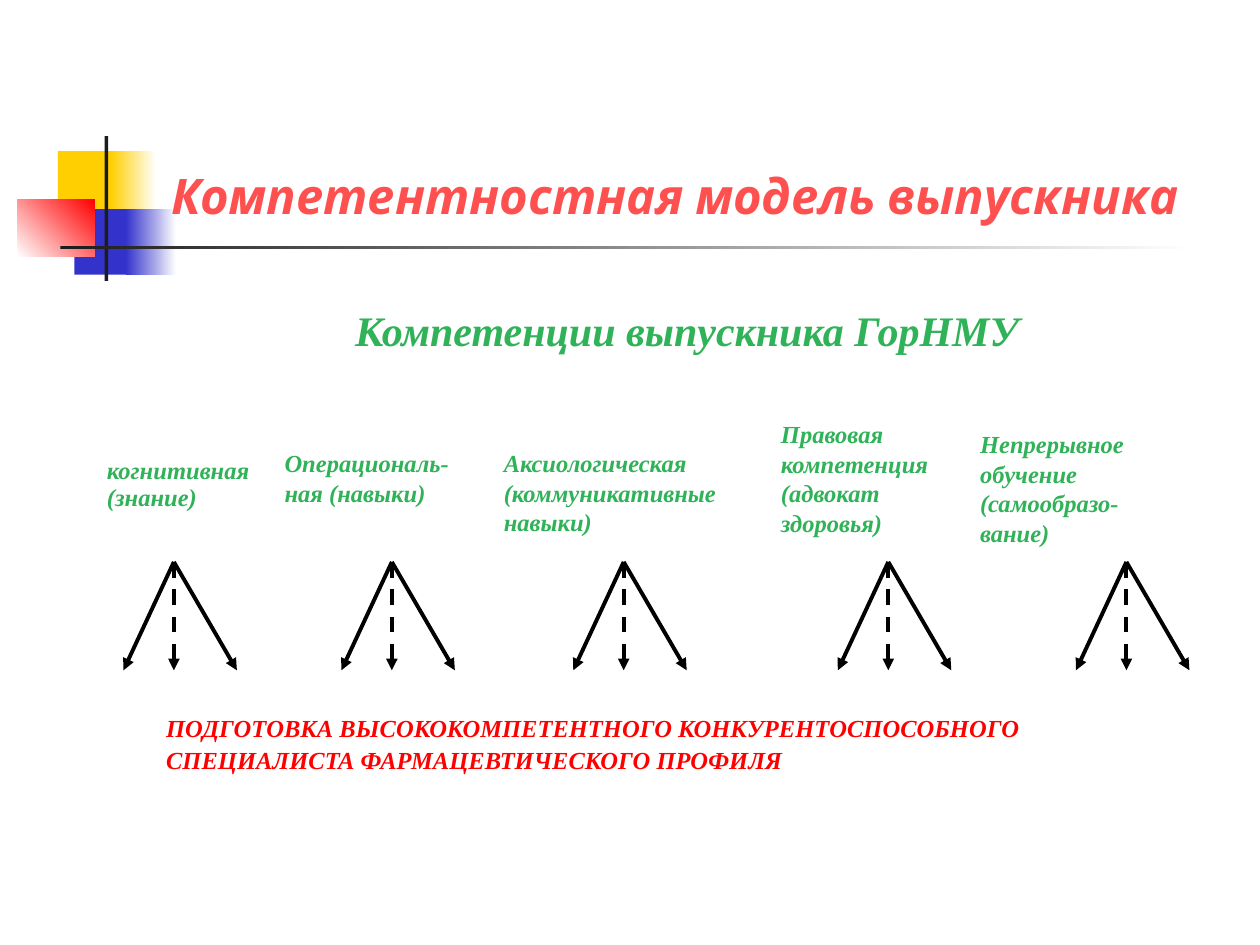
import pptx
import pptx.util
import pptx.dml.color
import pptx.enum.dml
import pptx.enum.shapes
import pptx.enum.text
import lxml.etree
from pptx.util import Inches, Pt

THEME = {
    "heading_font": "Karla", "body_font": "Times New Roman",
    "title_size": 28, "subtitle_size": 24, "body_size": 14,
    "title": "FF5050", "green": "30B258", "red": "FF0000", "black": "000000",
    "white": "FFFFFF", "yellow": "FFCF01", "blue": "3333CC", "dark": "1C1C1C",
}

TITLE = "Компетентностная модель выпускника"
SUBTITLE = "Компетенции выпускника ГорНМУ"
GOAL = ["ПОДГОТОВКА ВЫСОКОКОМПЕТЕНТНОГО КОНКУРЕНТОСПОСОБНОГО",
        "СПЕЦИАЛИСТА ФАРМАЦЕВТИЧЕСКОГО ПРОФИЛЯ"]

# Paragraphs, text box, spacing, arrow origin
COMPETENCIES = [
    (["когнитивная (знание)"], (0.75, 3.59, 1.49, 0.52),
     {"line": 0.9, "before": 3}, 1.38),
    (["Операциональ-ная (навыки)"], (2.16, 3.51, 1.65, 0.57), {}, 3.11),
    (["Аксиологическая", "(коммуникативные навыки)"],
     (3.9, 3.51, 2.36, 0.8), {}, 4.95),
    (["Правовая компетенция", "(адвокат здоровья)"],
     (6.1, 3.28, 1.57, 1.03), {}, 7.05),
    (["Непрерывное обучение", "(самообразо-вание)"],
     (7.68, 3.36, 1.65, 1.03), {}, 8.94),
]
ARROW_TOP, ARROW_BOTTOM = 4.46, 5.32
# Sideways reach of each arrow, dashed or not
ARROW_FAN = [(-0.4, False), (0.5, False), (0, True)]

# Box, first colour, last colour (None for a plain fill), gradient angle
ORNAMENT = [
    ((0.46, 1.2, 0.48, 0.52), "yellow", None, 0),
    ((0.88, 1.2, 0.36, 0.52), "yellow", "white", 0),
    ((0.59, 1.66, 0.46, 0.52), "blue", None, 0),
    ((1, 1.66, 0.4, 0.52), "blue", "white", 0),
    ((0.14, 1.58, 0.61, 0.46), "white", "red", 45),
    ((0.83, 1.08, 0.03, 1.15), "dark", None, 0),
    ((0.48, 1.95, 9, 0.03), "dark", "white", 0),
]


def colour(name):
    return pptx.dml.color.RGBColor.from_string(THEME[name])


def add_block(slide, box, first, last, angle):
    block = slide.shapes.add_shape(
        pptx.enum.shapes.MSO_SHAPE.RECTANGLE, *map(Inches, box))
    block.shadow.inherit = False
    block.line.fill.background()
    if last is None:
        block.fill.solid()
        block.fill.fore_color.rgb = colour(first)
        return
    block.fill.gradient()
    block.fill.gradient_angle = angle
    for stop, name in zip(block.fill.gradient_stops, (first, last)):
        stop.color.rgb = colour(name)


def add_text(slide, box, paragraphs, ink, size="body_size", font="body_font",
             line=None, before=None, after=None, bottom=False):
    frame = slide.shapes.add_textbox(*map(Inches, box)).text_frame
    frame.word_wrap = True
    anchors = pptx.enum.text.MSO_ANCHOR
    frame.vertical_anchor = anchors.BOTTOM if bottom else anchors.TOP
    frame.text = "\n".join(paragraphs)
    for paragraph in frame.paragraphs:
        paragraph.font.name = THEME[font]
        paragraph.font.size = Pt(THEME[size])
        paragraph.font.bold = paragraph.font.italic = True
        paragraph.font.color.rgb = colour(ink)
        if line:
            paragraph.line_spacing = line
        if before:
            paragraph.space_before = Pt(before)
        if after:
            paragraph.space_after = Pt(after)


def add_arrow(slide, start, reach, dashed):
    arrow = slide.shapes.add_connector(
        pptx.enum.shapes.MSO_CONNECTOR.STRAIGHT, Inches(start),
        Inches(ARROW_TOP), Inches(start + reach), Inches(ARROW_BOTTOM))
    arrow.line.color.rgb = colour("black")
    arrow.line.width = Pt(2.25)
    if dashed:
        arrow.line.dash_style = pptx.enum.dml.MSO_LINE.DASH
    qn = pptx.oxml.ns.qn
    properties = arrow.element.spPr
    lxml.etree.SubElement(properties.find(qn("a:ln")), qn("a:tailEnd"),
                          type="triangle")
    lxml.etree.SubElement(properties, qn("a:effectLst"))


def main():
    deck = pptx.Presentation()
    deck.slide_width, deck.slide_height = Inches(10), Inches(7.5)
    slide = deck.slides.add_slide(deck.slide_layouts[6])

    # Corner ornament and rule
    for part in ORNAMENT:
        add_block(slide, *part)

    # Headings
    add_text(slide, (1.26, 0.23, 8.52, 1.6), [TITLE], "title",
             "title_size", "heading_font", bottom=True)
    add_text(slide, (2.72, 2.41, 6.23, 0.46), [SUBTITLE], "green",
             "subtitle_size", line=0.9, before=12, after=3)

    # Competencies, each with its fan of arrows
    for paragraphs, box, spacing, start in COMPETENCIES:
        add_text(slide, box, paragraphs, "green", **spacing)
        for reach, dashed in ARROW_FAN:
            add_arrow(slide, start, reach, dashed)

    # Overall goal
    add_text(slide, (1.22, 5.64, 8.6, 0.56), GOAL, "red", line=0.9, before=3)

    deck.save("out.pptx")


if __name__ == "__main__":
    main()
